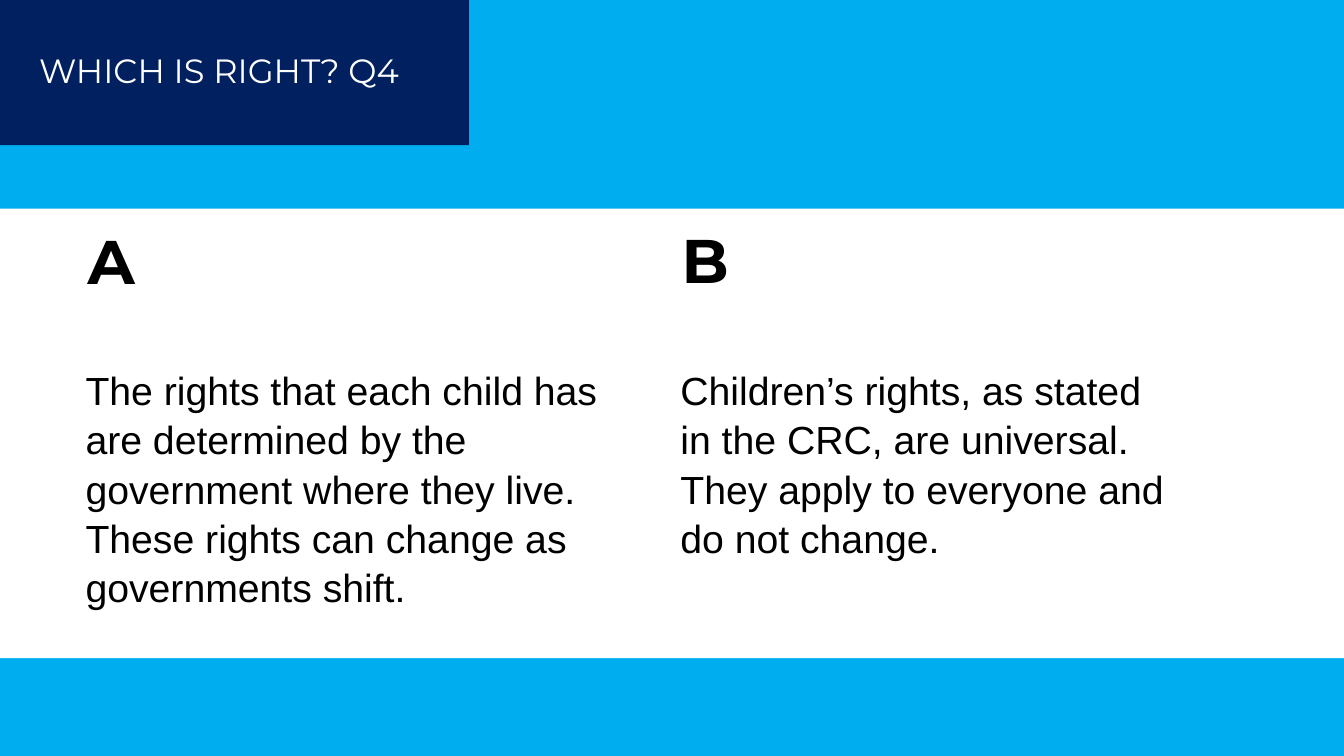
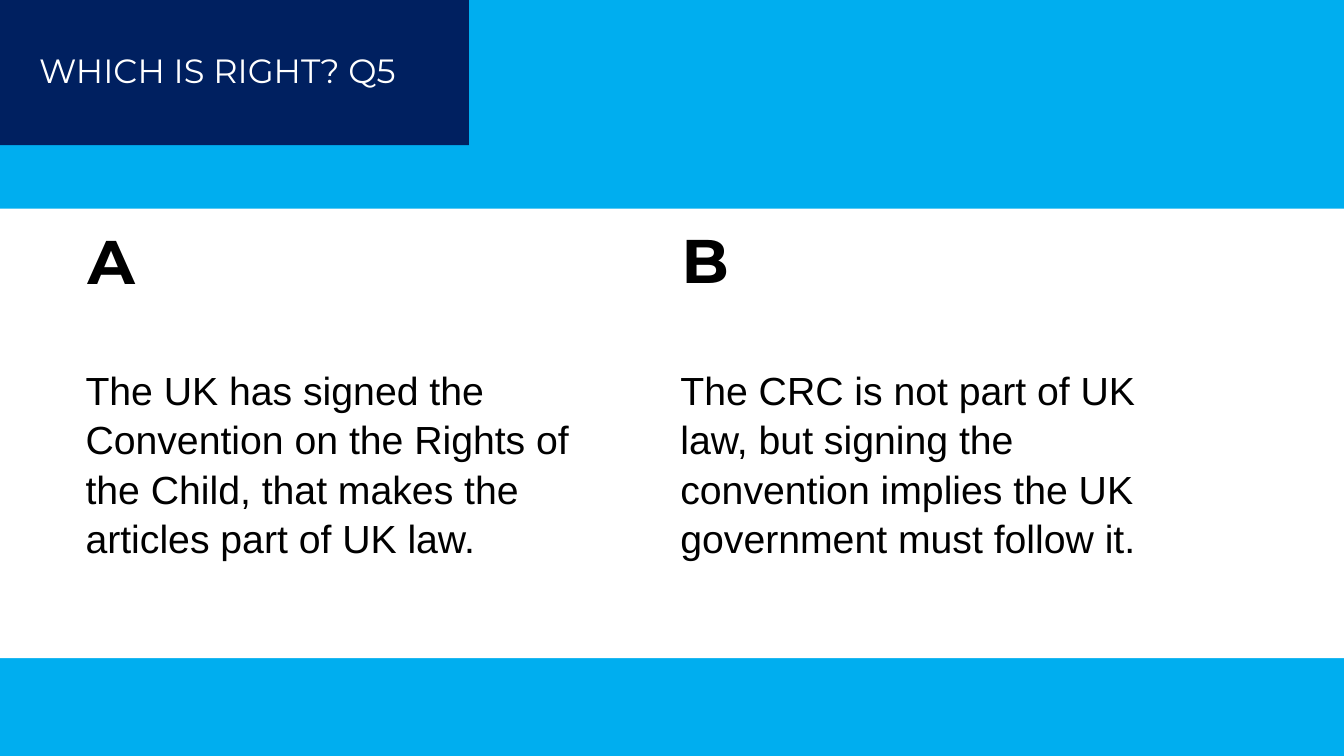
from pptx import Presentation
from pptx.dml.color import RGBColor
from pptx.enum import shapes
from pptx.util import Inches, Pt

# Content: title, then the statements A and B
QUESTIONS = [
    ("WHICH IS RIGHT? Q4", [
        "The rights that each child has are determined by the government "
        "where they live. These rights can change as governments shift.",
        "Children’s rights, as stated in the CRC, are universal. "
        "They apply to everyone and do not change."]),
    ("WHICH IS RIGHT? Q5", [
        "The UK has signed the Convention on the Rights of the Child, "
        "that makes the articles part of UK law.",
        "The CRC is not part of UK law, but signing the convention "
        "implies the UK government must follow it."]),
]

# Shared look
SKY, NAVY, WHITE, BLACK = "00AEEF", "002060", "FFFFFF", "000000"
TITLE = {"name": "Montserrat", "size": Pt(24)}
LETTER = {"name": "Montserrat", "size": Pt(44), "bold": True}
STATEMENT = {"name": "Arial", "size": Pt(28)}
BANDS = [((0, 2.07, 13.34, 4.46), WHITE), ((0, 0, 4.65, 1.44), NAVY)]
TITLE_BOX = (0.29, 0.45, 4.13, 0.5)
# Per answer: letter, letter's left and top, statement's left and width
ANSWERS = [("A", 0.75, 2.09, 0.75, 5.39), ("B", 6.64, 2.08, 6.65, 5.06)]
LETTER_SIZE = (0.74, 0.98)
STATEMENT_TOP, STATEMENT_HEIGHT = 3.56, 2.46


def paint(fill, colour):
    fill.solid()
    fill.fore_color.rgb = RGBColor.from_string(colour)


def add_band(slide, box, colour):
    band = slide.shapes.add_shape(
        shapes.MSO_SHAPE.RECTANGLE, *map(Inches, box))
    band.shadow.inherit = False
    paint(band.fill, colour)
    band.line.fill.background()


def add_text(slide, box, words, style, colour=BLACK, inset=None, spacing=None):
    frame = slide.shapes.add_textbox(*map(Inches, box)).text_frame
    frame.word_wrap = True
    if inset:
        for side in ("left", "top", "right", "bottom"):
            setattr(frame, f"margin_{side}", Inches(inset))
    paragraph = frame.paragraphs[0]
    if spacing:
        paragraph.line_spacing = spacing
    run = paragraph.add_run()
    run.text = words
    for key, value in style.items():
        setattr(run.font, key, value)
    run.font.color.rgb = RGBColor.from_string(colour)


def add_question(deck, title, statements):
    slide = deck.slides.add_slide(deck.slide_layouts[6])
    paint(slide.background.fill, SKY)
    for box, colour in BANDS:
        add_band(slide, box, colour)
    add_text(slide, TITLE_BOX, title, TITLE, WHITE)
    # Two answers side by side
    for (letter, x, y, left, width), statement in zip(ANSWERS, statements):
        add_text(slide, (x, y, *LETTER_SIZE), letter, LETTER, inset=0.12)
        add_text(slide, (left, STATEMENT_TOP, width, STATEMENT_HEIGHT),
                 statement, STATEMENT, spacing=1.05)


def main():
    deck = Presentation()
    deck.slide_width, deck.slide_height = Inches(13.33), Inches(7.5)
    for title, statements in QUESTIONS:
        add_question(deck, title, statements)
    deck.save("out.pptx")


if __name__ == "__main__":
    main()
